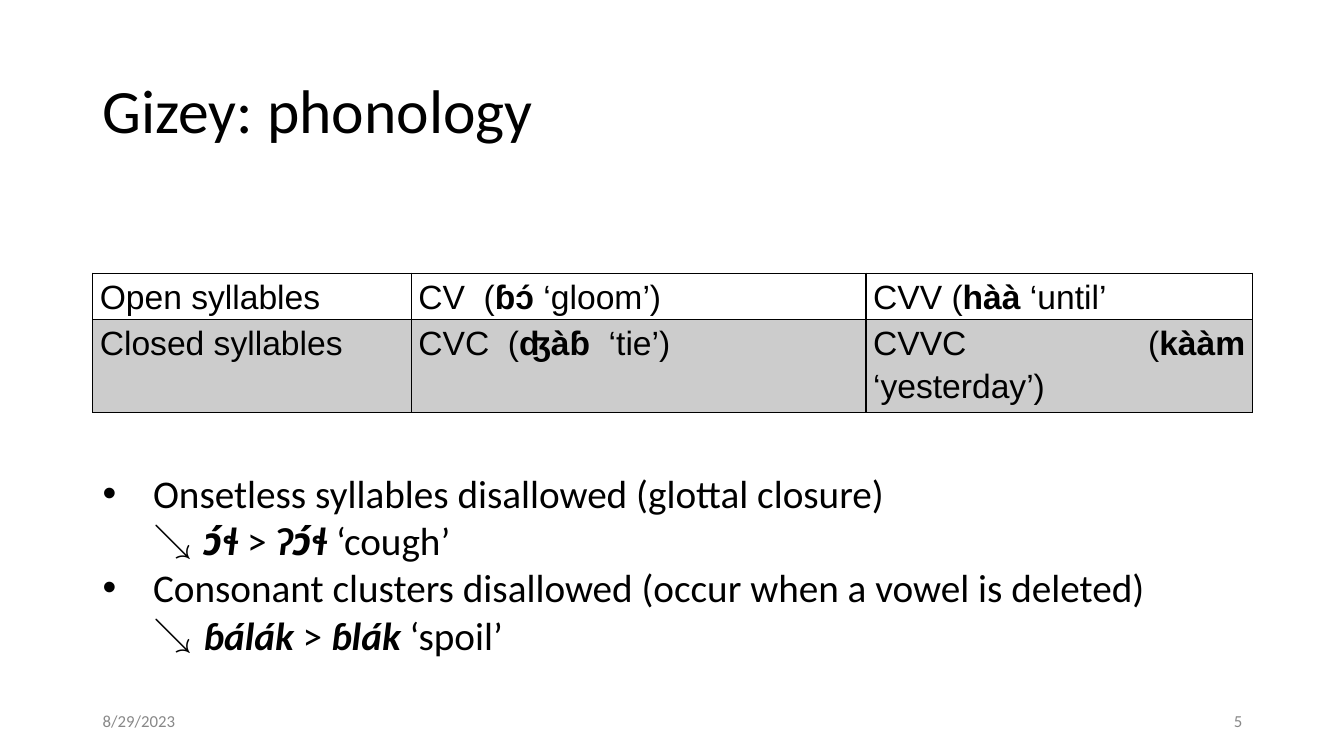
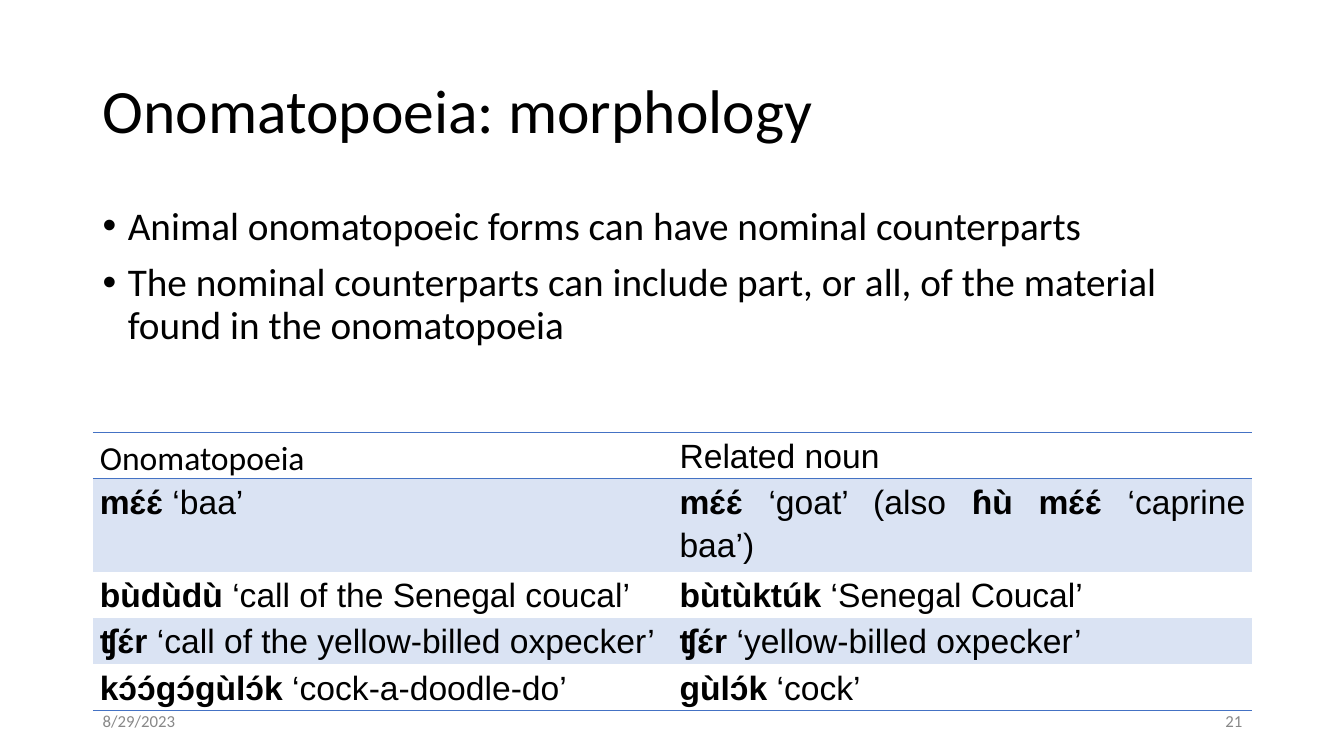
from dataclasses import dataclass

from lxml.etree import SubElement
from pptx import Presentation
from pptx.dml.color import RGBColor as RGB
from pptx.enum.text import MSO_ANCHOR as Anchor
from pptx.enum.text import MSO_AUTO_SIZE as AutoSize
from pptx.enum.text import PP_ALIGN as Align
from pptx.oxml.ns import qn
from pptx.util import Inches, Pt

PLAIN_TABLE_STYLE = "{2D5ABB26-0587-4C30-8999-92F81FD0307C}"


@dataclass(frozen=True)
class Theme:
    text: str = "000000"
    muted: str = "888888"
    blue: str = "4472C4"
    gray_band: str = "CCCCCC"
    blue_band: str = "DAE3F3"
    body_font: str = "Calibri"
    table_font: str = "Arial"
    title_size: int = 44
    body_size: int = 28
    table_size: int = 24
    footer_size: int = 12
    left: float = 0.92
    width: float = 11.5


THEME = Theme()


# Text helpers
def write_runs(paragraph, marked_text, size, font=THEME.body_font,
               color=THEME.text, italic=False):
    """Fill a paragraph; text between asterisks is emphasised."""
    for index, part in enumerate(marked_text.split("*")):
        if not part:
            continue
        run = paragraph.add_run()
        run.text = part
        emphasised = index % 2 == 1
        run.font.name = font
        run.font.size = Pt(size)
        run.font.color.rgb = RGB.from_string(color)
        run.font.bold = emphasised
        run.font.italic = emphasised and italic


def add_text_frame(slide, left, top, width, height, anchor=Anchor.TOP):
    box = slide.shapes.add_textbox(
        Inches(left), Inches(top), Inches(width), Inches(height))
    text_frame = box.text_frame
    text_frame.word_wrap = True
    text_frame.vertical_anchor = anchor
    return text_frame


def set_bullet(paragraph, character, margin, hanging):
    properties = paragraph._p.get_or_add_pPr()
    properties.set("marL", str(Inches(margin)))
    properties.set("indent", str(-Inches(hanging)))
    SubElement(properties, qn("a:buFont"), typeface="Arial")
    SubElement(properties, qn("a:buChar"), char=character)


def add_bullets(slide, items, top, width, height, hanging,
                line_spacing=1.0, gap=0, grow=False):
    """Items are (bullet character, level, text)."""
    text_frame = add_text_frame(slide, THEME.left, top, width, height)
    if grow:
        text_frame.auto_size = AutoSize.SHAPE_TO_FIT_TEXT
    for index, (character, level, text) in enumerate(items):
        paragraph = (text_frame.add_paragraph() if index
                     else text_frame.paragraphs[0])
        paragraph.level = level
        paragraph.line_spacing = line_spacing
        paragraph.space_before = Pt(gap if index else 0)
        set_bullet(paragraph, character, hanging * (level + 1), hanging)
        write_runs(paragraph, text, THEME.body_size, italic=True)


# Shared frame: title, date and page number
def add_footer(slide, left, text, alignment):
    text_frame = add_text_frame(slide, left, 6.95, 3, 0.4, Anchor.MIDDLE)
    paragraph = text_frame.paragraphs[0]
    paragraph.alignment = alignment
    write_runs(paragraph, text, THEME.footer_size, color=THEME.muted)


def add_slide(presentation, title, page):
    slide = presentation.slides.add_slide(presentation.slide_layouts[6])
    text_frame = add_text_frame(
        slide, THEME.left, 0.4, THEME.width, 1.45, Anchor.MIDDLE)
    paragraph = text_frame.paragraphs[0]
    paragraph.line_spacing = 0.9
    write_runs(paragraph, title, THEME.title_size)
    add_footer(slide, THEME.left, "8/29/2023", Align.LEFT)
    add_footer(slide, THEME.left + THEME.width - 3, str(page), Align.RIGHT)
    return slide


# Tables
def set_borders(cell, edges, color):
    properties = cell._tc.get_or_add_tcPr()
    for edge in edges:
        line = SubElement(properties, qn(f"a:ln{edge}"), w=str(Pt(1)))
        fill = SubElement(line, qn("a:solidFill"))
        SubElement(fill, qn("a:srgbClr"), val=color)


def format_cell(cell, text, font, band_color):
    cell.margin_left = cell.margin_right = Inches(0.07)
    cell.margin_top = cell.margin_bottom = 0
    if band_color:
        cell.fill.solid()
        cell.fill.fore_color.rgb = RGB.from_string(band_color)
    else:
        cell.fill.background()
    paragraph = cell.text_frame.paragraphs[0]
    paragraph.alignment = Align.JUSTIFY
    paragraph.line_spacing = 1.15
    write_runs(paragraph, text, THEME.table_size, font)


def add_banded_table(slide, rows, top, column_widths, band_color,
                     line_color, row_edges, cell_fonts=None):
    """Every second row is banded; row_edges names the lines of each row."""
    row_height = Inches(0.33)
    table = slide.shapes.add_table(
        len(rows), len(column_widths), Inches(THEME.left), Inches(top),
        Inches(THEME.width), row_height * len(rows)).table
    table.first_row = table.horz_banding = False
    table._tbl.tblPr.find(qn("a:tableStyleId")).text = PLAIN_TABLE_STYLE
    for column, width in zip(table.columns, column_widths):
        column.width = Inches(width)
    fonts = cell_fonts or {}
    for row_index, (texts, edges) in enumerate(zip(rows, row_edges)):
        table.rows[row_index].height = row_height
        for column_index, text in enumerate(texts):
            cell = table.cell(row_index, column_index)
            set_borders(cell, edges, line_color)
            format_cell(cell, text,
                        fonts.get((row_index, column_index), THEME.table_font),
                        band_color if row_index % 2 else None)


# Slides
def build_phonology(presentation):
    slide = add_slide(presentation, "Gizey: phonology", 5)
    rows = [
        ("Open syllables", "CV  (*ɓɔ́* ‘gloom’)", "CVV (*hàà* ‘until’"),
        ("Closed syllables", "CVC  (*ʤàɓ*  ‘tie’)", "CVVC (*kààm* ‘yesterday’)"),
    ]
    add_banded_table(slide, rows, 2.71, (3.16, 4.51, 3.83), THEME.gray_band,
                     THEME.text, ("LRTB", "LRTB"))
    bullets = [
        ("•", 0, "Onsetless syllables disallowed (glottal closure)"),
        ("↘", 1, "*ɔ́ɬ* > *ʔɔ́ɬ* ‘cough’"),
        ("•", 0, "Consonant clusters disallowed (occur when a vowel is deleted)"),
        ("↘", 1, "*ɓálák* > *ɓlák* ‘spoil’"),
    ]
    add_bullets(slide, bullets, 4.61, 11.77, 1.99, hanging=0.5, grow=True)


def build_morphology(presentation):
    slide = add_slide(presentation, "Onomatopoeia: morphology", 21)
    bullets = [
        ("•", 0, "Animal onomatopoeic forms can have nominal counterparts"),
        ("•", 0, "The nominal counterparts can include part, or all, of the "
                 "material found in the onomatopoeia"),
    ]
    add_bullets(slide, bullets, 2, THEME.width, 2.14, hanging=0.25,
                line_spacing=0.9, gap=10)
    rows = [
        ("Onomatopoeia", "Related noun"),
        ("*mɛ́ɛ́* ‘baa’", "*mɛ́ɛ́* ‘goat’ (also *ɦù mɛ́ɛ́* ‘caprine baa’)"),
        ("*bùdùdù* ‘call of the Senegal coucal’", "*bùtùktúk* ‘Senegal Coucal’"),
        ("*ʧɛ́r* ‘call of the yellow-billed oxpecker’",
         "*ʧɛ́r* ‘yellow-billed oxpecker’"),
        ("*kɔ́ɔ́gɔ́gùlɔ́k* ‘cock-a-doodle-do’", "*gùlɔ́k* ‘cock’"),
    ]
    add_banded_table(slide, rows, 4.29, (5.75, 5.75), THEME.blue_band,
                     THEME.blue, ("TB", "", "", "", "B"),
                     cell_fonts={(0, 0): THEME.body_font})


def main():
    presentation = Presentation()
    presentation.slide_width = Inches(13.33)
    presentation.slide_height = Inches(7.5)
    build_phonology(presentation)
    build_morphology(presentation)
    presentation.save("out.pptx")


if __name__ == "__main__":
    main()
